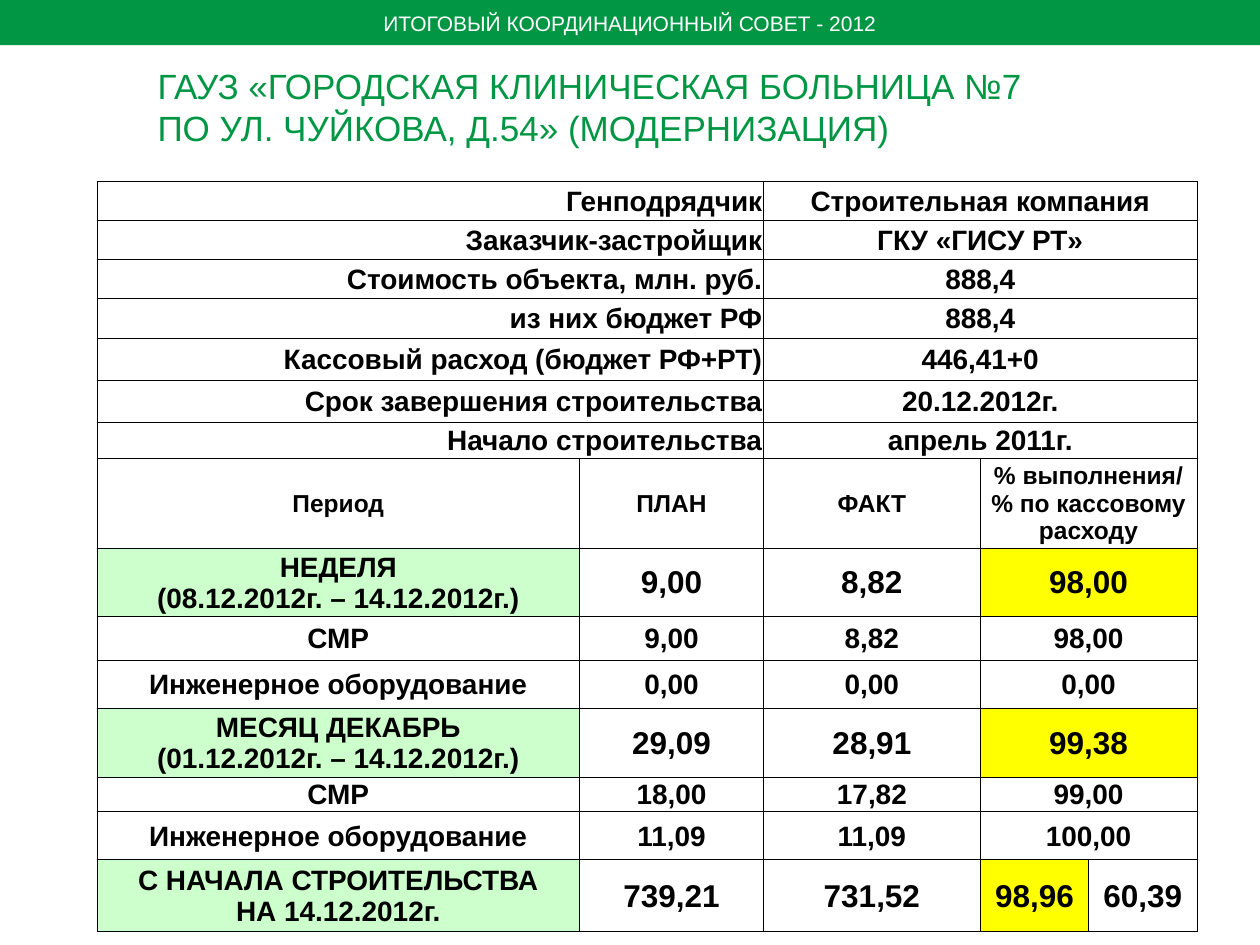
from lxml.etree import SubElement
from pptx import Presentation
from pptx.dml.color import RGBColor
from pptx.enum.shapes import MSO_SHAPE as Shape
from pptx.enum.text import MSO_ANCHOR as Anchor, MSO_AUTO_SIZE as AutoSize, PP_ALIGN as Align
from pptx.oxml.ns import qn
from pptx.util import Inches, Pt

GREEN, LIGHT_GREEN, YELLOW = "009644", "CCFFCC", "FFFF00"
WHITE, BLACK = "FFFFFF", "000000"

COL_WIDTHS = [3.83, 1.46, 1.72, 0.86, 0.86]
ROW_HEIGHTS = [0.31, 0.31, 0.31, 0.32, 0.33, 0.33, 0.29, 0.71,
               0.54, 0.35, 0.38, 0.54, 0.27, 0.38, 0.57]

FACTS = [
    ("Генподрядчик", "Строительная компания"),
    ("Заказчик-застройщик", "ГКУ «ГИСУ РТ»"),
    ("Стоимость объекта, млн. руб.", "888,4"),
    ("из них бюджет РФ", "888,4"),
    ("Кассовый расход (бюджет РФ+РТ)", "446,41+0"),
    ("Срок завершения строительства", "20.12.2012г."),
    ("Начало строительства", "апрель 2011г."),
]
HEADER = ("Период", "ПЛАН", "ФАКТ", "% выполнения/ % по кассовому расходу")
# A two-line label marks a period total
PERIODS = [
    ("НЕДЕЛЯ\n(08.12.2012г. – 14.12.2012г.)", "9,00", "8,82", "98,00"),
    ("СМР", "9,00", "8,82", "98,00"),
    ("Инженерное оборудование", "0,00", "0,00", "0,00"),
    ("МЕСЯЦ ДЕКАБРЬ\n(01.12.2012г. – 14.12.2012г.)", "29,09", "28,91", "99,38"),
    ("СМР", "18,00", "17,82", "99,00"),
    ("Инженерное оборудование", "11,09", "11,09", "100,00"),
    ("С НАЧАЛА СТРОИТЕЛЬСТВА\nНА 14.12.2012г.", "739,21", "731,52", "98,96", "60,39"),
]


def rgb(color):
    return RGBColor.from_string(color)


def set_format(target, values):
    for name, value in values.items():
        setattr(target, name, value)


def write_text(tf, text, size, color, align, bold=False):
    """Fill a text frame, one paragraph per line of text."""
    tf.text = text
    for p in tf.paragraphs:
        p.alignment = align
        for r in p.runs:
            set_format(r.font, {"name": "Arial", "size": Pt(size), "bold": bold})
            r.font.color.rgb = rgb(color)


def add_banner(slide, text):
    sp = slide.shapes.add_shape(Shape.RECTANGLE, 0, 0, Inches(10), Inches(0.36))
    sp.shadow.inherit = False
    sp.fill.solid()
    sp.fill.fore_color.rgb = rgb(GREEN)
    sp.line.fill.background()
    set_format(sp.text_frame, {"word_wrap": False, "vertical_anchor": Anchor.MIDDLE})
    write_text(sp.text_frame, text, 12, WHITE, Align.CENTER)


def set_title(slide, text):
    title = slide.shapes.title
    set_format(title, {"left": Inches(1.15), "top": Inches(0.46),
                       "width": Inches(8.47), "height": Inches(0.77)})
    set_format(title.text_frame, {"word_wrap": True, "vertical_anchor": Anchor.TOP,
                                  "auto_size": AutoSize.SHAPE_TO_FIT_TEXT})
    write_text(title.text_frame, text, 20, GREEN, Align.LEFT)


def set_borders(cell):
    tc_pr = cell._tc.get_or_add_tcPr()
    for side in ("a:lnL", "a:lnR", "a:lnT", "a:lnB"):
        ln = SubElement(tc_pr, qn(side), w=str(Pt(0.5)))
        SubElement(SubElement(ln, qn("a:solidFill")), qn("a:srgbClr"), val=BLACK)


def fill_cell(cell, text, size=16, align=Align.CENTER, fill=None):
    margin = Inches(0.01)
    set_format(cell, {"margin_left": margin, "margin_right": margin, "margin_top": margin,
                      "margin_bottom": 0, "vertical_anchor": Anchor.MIDDLE})
    write_text(cell.text_frame, text, size, BLACK, align, bold=True)
    if fill:
        cell.fill.solid()
        cell.fill.fore_color.rgb = rgb(fill)


def add_grid(slide):
    """Add the empty bordered table."""
    table = slide.shapes.add_table(
        len(ROW_HEIGHTS), len(COL_WIDTHS), Inches(0.77), Inches(1.44),
        Inches(sum(COL_WIDTHS)), Inches(sum(ROW_HEIGHTS))).table
    set_format(table, {"first_row": False, "horz_banding": False})
    for column, width in zip(table.columns, COL_WIDTHS):
        column.width = Inches(width)
    for row, height in zip(table.rows, ROW_HEIGHTS):
        row.height = Inches(height)
    for cell in table.iter_cells():
        set_borders(cell)
        cell.fill.background()
    return table


def fill_facts(table):
    for i, (label, value) in enumerate(FACTS):
        table.cell(i, 0).merge(table.cell(i, 1))
        table.cell(i, 2).merge(table.cell(i, 4))
        fill_cell(table.cell(i, 0), label, align=Align.RIGHT)
        fill_cell(table.cell(i, 2), value)


def fill_periods(table):
    for i, values in enumerate([HEADER] + PERIODS, len(FACTS)):
        is_total = "\n" in values[0]
        label_size = 14 if values is HEADER else 16
        fills = {0: LIGHT_GREEN, 3: YELLOW} if is_total else {}
        if len(values) == 4:
            table.cell(i, 3).merge(table.cell(i, 4))
        for j, value in enumerate(values):
            size = 18 if is_total and j else label_size
            fill_cell(table.cell(i, j), value, size, fill=fills.get(j))


def main():
    prs = Presentation()
    set_format(prs, {"slide_width": Inches(10), "slide_height": Inches(7.5)})
    slide = prs.slides.add_slide(prs.slide_layouts[5])
    add_banner(slide, "ИТОГОВЫЙ КООРДИНАЦИОННЫЙ СОВЕТ - 2012")
    set_title(slide, "ГАУЗ «ГОРОДСКАЯ КЛИНИЧЕСКАЯ БОЛЬНИЦА №7\n"
                     "ПО УЛ. ЧУЙКОВА, Д.54» (МОДЕРНИЗАЦИЯ)")
    table = add_grid(slide)
    fill_facts(table)
    fill_periods(table)
    prs.save("out.pptx")


if __name__ == "__main__":
    main()
